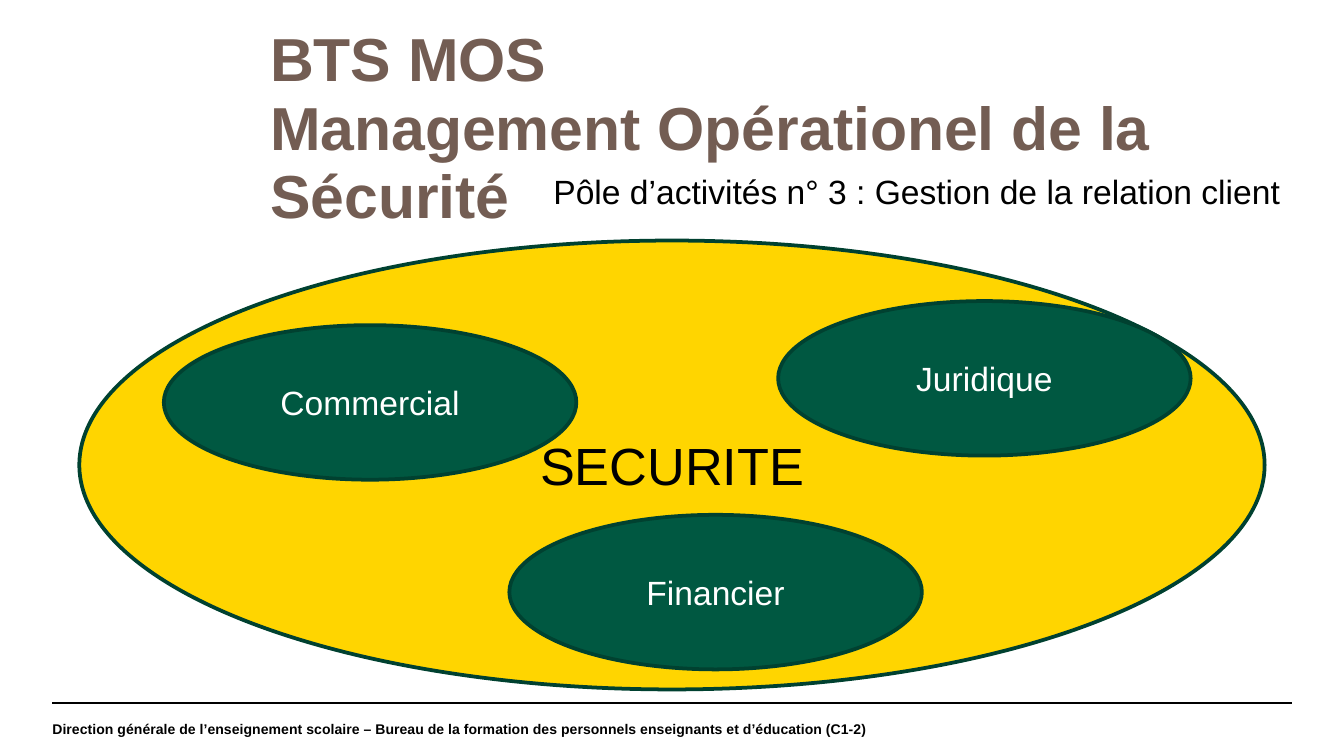
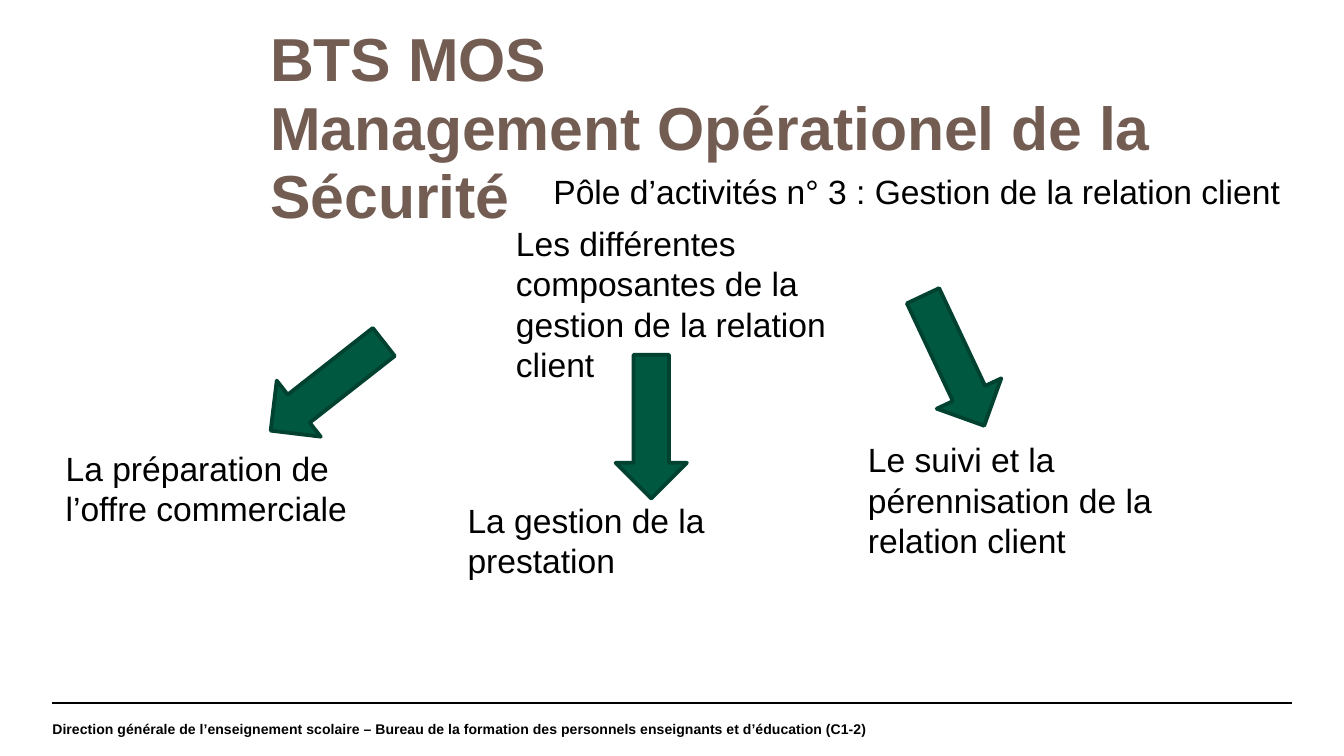
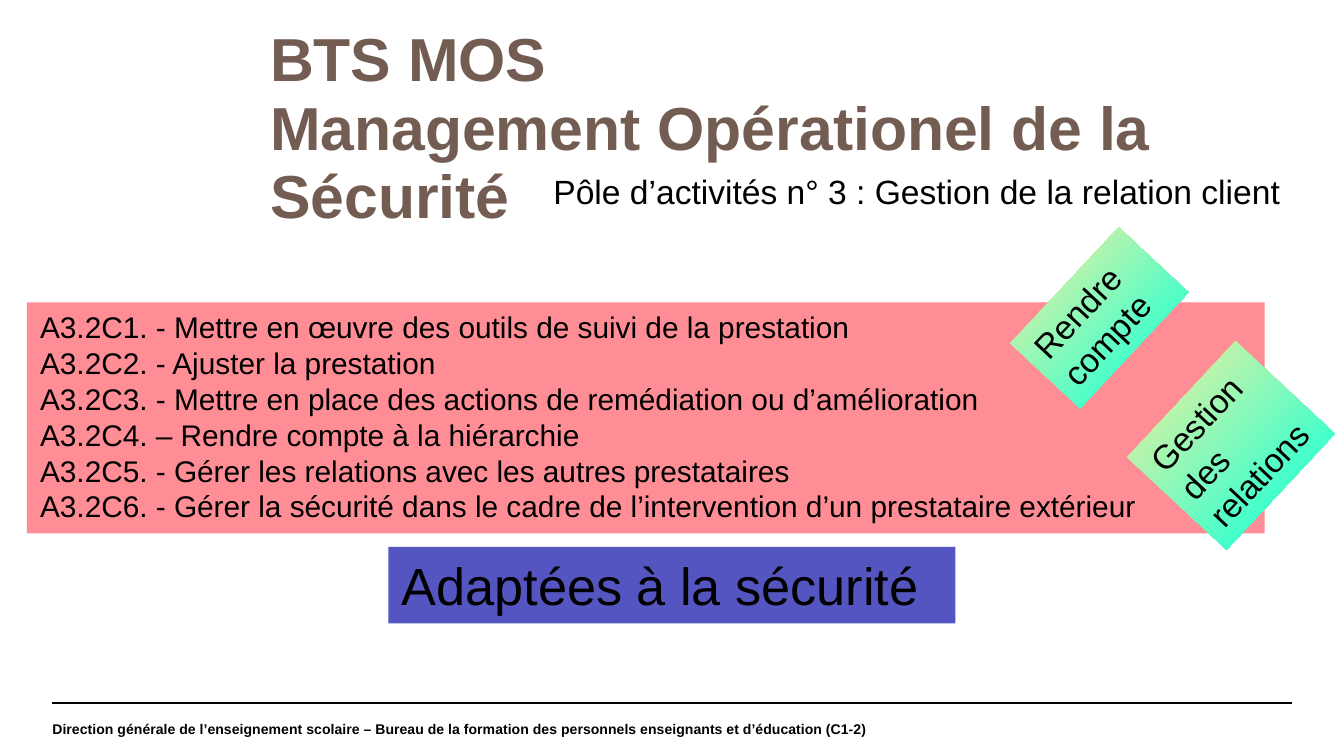
from lxml.etree import SubElement
from pptx import Presentation
from pptx.dml.color import RGBColor
from pptx.enum.shapes import MSO_CONNECTOR, MSO_SHAPE
from pptx.enum.text import MSO_ANCHOR, PP_ALIGN
from pptx.oxml.ns import qn
from pptx.util import Pt

FONT = "Arial"
BLACK, WHITE = "000000", "FFFFFF"
BROWN, YELLOW, PINK, VIOLET = "735D53", "FFD500", "FF8D95", "5555C1"
GREEN, DARK_GREEN = "005841", "004130"
MINT_STOPS = [(0, "FFEE99"), (74, "41FFCD"), (83, "41FFCD"), (100, "80FFDE")]

PAGE_WIDTH, PAGE_HEIGHT = 720, 405
TITLE_BOX = (144.7, 14.4, 538.6, 103)
SUBTITLE_BOX = (289.4, 87.8, 430.6, 29)
FOOTER_BOX = (28.1, 376.6, 671.8, 28.1)
RULE_WIDTH = 663.8
CONTENT_BOX = (0, 115.9, PAGE_WIDTH, 260.7)

TITLE = ["BTS MOS", "Management Opérationel de la Sécurité"]
SUBTITLE = "Pôle d’activités n° 3 : Gestion de la relation client"
FOOTER = ("Direction générale de l’enseignement scolaire – Bureau de la formation "
          "des personnels enseignants et d’éducation (C1-2)")
SKILLS = [
    "A3.2C1. - Mettre en œuvre des outils de suivi de la prestation",
    "A3.2C2. - Ajuster la prestation",
    "A3.2C3. - Mettre en place des actions de remédiation ou d’amélioration",
    "A3.2C4. – Rendre compte à la hiérarchie",
    "A3.2C5. - Gérer les relations avec les autres prestataires",
    "A3.2C6. - Gérer la sécurité dans le cadre de l’intervention d’un prestataire extérieur",
]


def color(value):
    """Turn a hex string into a colour."""
    return RGBColor.from_string(value)


def points(box):
    """Turn a box of numbers into lengths."""
    return [Pt(length) for length in box]


def inside(box, left, top, width, height):
    """Place a part relative to the corner of a box."""
    return box[0] + left, box[1] + top, width, height


def write(shape, lines, size=18, ink=BLACK, bold=False, align=PP_ALIGN.LEFT,
          anchor=MSO_ANCHOR.TOP, spacing=None, margins=(7.2, 3.6)):
    """Fill a shape with one formatted paragraph per line."""
    frame = shape.text_frame
    frame.word_wrap = True
    frame.vertical_anchor = anchor
    frame.margin_left = frame.margin_right = Pt(margins[0])
    frame.margin_top = frame.margin_bottom = Pt(margins[1])
    for index, line in enumerate(lines):
        para = frame.add_paragraph() if index else frame.paragraphs[0]
        para.alignment = align
        if spacing:
            para.line_spacing = spacing
        span = para.add_run()
        span.text = line
        span.font.name = FONT
        span.font.size = Pt(size)
        span.font.bold = bold
        span.font.color.rgb = color(ink)


def add_text(page, box, lines, **style):
    """Add a text box."""
    write(page.shapes.add_textbox(*points(box)), lines, **style)


def add_figure(page, kind, box, fill=None, outline=None, rotation=0):
    """Add a flat preset shape."""
    shape = page.shapes.add_shape(kind, *points(box))
    shape.shadow.inherit = False
    shape.rotation = rotation
    if fill:
        shape.fill.solid()
        shape.fill.fore_color.rgb = color(fill)
    if outline:
        shape.line.color.rgb = color(outline)
        shape.line.width = Pt(2)
    else:
        shape.line.fill.background()
    return shape


def fill_gradient(shape, stops):
    """Fill a shape with a gradient running from its top to its bottom."""
    shape.fill.gradient()
    gradient = shape._element.spPr.find(qn("a:gradFill"))
    gradient.set("rotWithShape", "1")
    for child in list(gradient):
        gradient.remove(child)
    stop_list = SubElement(gradient, qn("a:gsLst"))
    for position, value in stops:
        stop = SubElement(stop_list, qn("a:gs"), pos=str(position * 1000))
        SubElement(stop, qn("a:srgbClr"), val=value)
    SubElement(gradient, qn("a:lin"), ang="5400000", scaled="0")


def add_footer(page, box):
    """Add the rule and the department name below it."""
    left, top = box[:2]
    rule = page.shapes.add_connector(
        MSO_CONNECTOR.STRAIGHT, *points((left, top, left + RULE_WIDTH, top)))
    rule.line.color.rgb = color(BLACK)
    rule.line.width = Pt(0.8)
    SubElement(rule._element.spPr, qn("a:effectLst"))
    add_text(page, box, [FOOTER], size=7.5, bold=True,
             anchor=MSO_ANCHOR.MIDDLE, margins=(0, 0))


def add_page(deck):
    """Add a page with the shared footer, title and subtitle."""
    page = deck.slides.add_slide(deck.slide_layouts[6])
    add_footer(page, FOOTER_BOX)
    add_text(page, TITLE_BOX, TITLE, size=32.5, ink=BROWN, bold=True,
             spacing=0.94, margins=(0, 0))
    add_text(page, SUBTITLE_BOX, [SUBTITLE])
    return page


def add_ellipse(page, box, label, fill, **style):
    """Add an outlined ellipse with a centred label."""
    ellipse = add_figure(page, MSO_SHAPE.OVAL, box, fill, DARK_GREEN)
    write(ellipse, [label], align=PP_ALIGN.CENTER, anchor=MSO_ANCHOR.MIDDLE, **style)


def draw_domains(page, box):
    """Draw the security field and the three domains within it."""
    add_ellipse(page, inside(box, 42.5, 13, 635, 240.5), "SECURITE", YELLOW, size=28)
    for label, left, top in [("Juridique", 416.9, 45.4), ("Commercial", 87.8, 58.3),
                             ("Financier", 272.9, 159.9)]:
        add_ellipse(page, inside(box, left, top, 221, 82.8), label, GREEN, ink=WHITE)


def draw_components(page, box):
    """Draw the heading and the arrows to its three components."""
    add_text(page, inside(box, 269.3, 0, 209.5, 94.3),
             ["Les différentes composantes de la gestion de la relation client"])
    for label, left, top, height in [
            ("La préparation de l’offre commerciale", 28.1, 120.3, 51.1),
            ("La gestion de la prestation", 243.4, 148.3, 51.1),
            ("Le suivi et la pérennisation de la relation client", 457.9, 115.9, 72.7)]:
        add_text(page, inside(box, left, top, 172.8, height), [label])
    for left, top, rotation in [(156.2, 52.6, 51.9), (491.8, 38.9, 334.8), (329.8, 74.2, 0)]:
        add_figure(page, MSO_SHAPE.DOWN_ARROW, inside(box, left, top, 38.2, 77),
                   GREEN, DARK_GREEN, rotation)


def add_tag(page, box, label):
    """Add a tilted gradient tag."""
    tag = add_figure(page, MSO_SHAPE.RECTANGLE, box, rotation=313)
    fill_gradient(tag, MINT_STOPS)
    write(tag, [label])


def draw_skills(page, box):
    """Draw the list of skills, its two tags and the conclusion."""
    for lines, size, fill, place in [
            (SKILLS, 16, PINK, (14.4, 46.1, 663.1, 123.8)),
            (["Adaptées à la sécurité"], 28, VIOLET, (208.1, 177.1, 303.8, 41))]:
        panel = add_figure(page, MSO_SHAPE.RECTANGLE, inside(box, *place), fill)
        write(panel, lines, size=size)
    add_tag(page, inside(box, 546.5, 28.8, 85, 51.1), "Rendre compte")
    add_tag(page, inside(box, 617, 86.4, 85, 72.7), "Gestion des relations")


def main():
    """Build and save the deck."""
    deck = Presentation()
    deck.slide_width, deck.slide_height = Pt(PAGE_WIDTH), Pt(PAGE_HEIGHT)
    for draw in (draw_domains, draw_components, draw_skills):
        draw(add_page(deck), CONTENT_BOX)
    deck.save("out.pptx")


if __name__ == "__main__":
    main()
